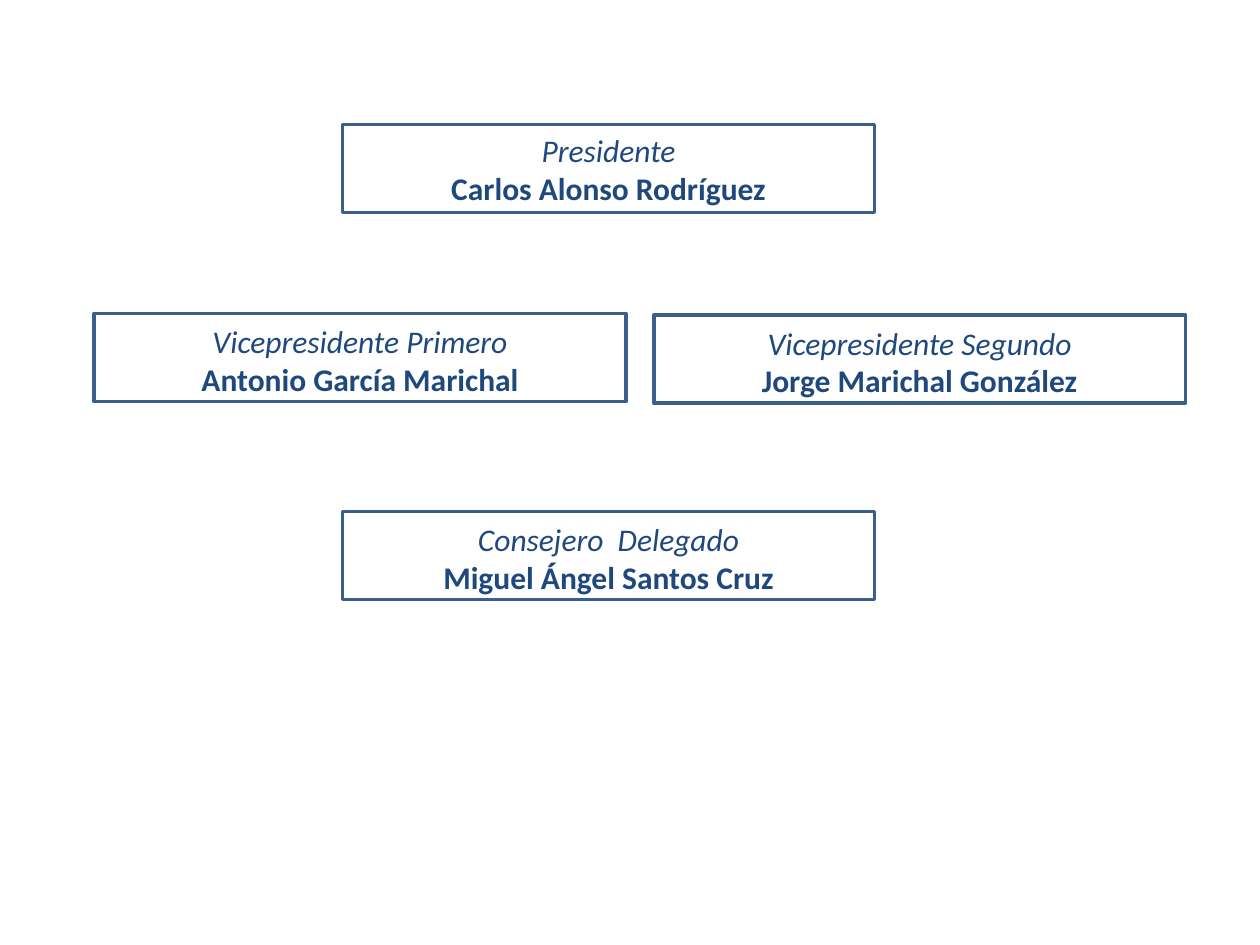
from dataclasses import dataclass

from pptx import Presentation
from pptx.dml.color import RGBColor
from pptx.enum.shapes import MSO_SHAPE as Preset
from pptx.enum.text import MSO_ANCHOR as Anchor, PP_ALIGN as Align
from pptx.slide import Slide
from pptx.util import Cm, Pt

BORDER_BLUE = RGBColor(0x3A, 0x5F, 0x8C)
TEXT_BLUE = RGBColor(0x1F, 0x49, 0x7D)
BOX_WIDTH = Cm(10.72)
BOX_HEIGHT = Cm(1.78)
CENTRE_LEFT = 6.91


@dataclass(frozen=True)
class Position:
    role: str
    holder: str
    left: float
    top: float
    top_inset: float = 0.13


POSITIONS = [
    Position("Presidente", "Carlos Alonso Rodríguez", CENTRE_LEFT, 2.51, 0.04),
    Position("Vicepresidente Primero", "Antonio García Marichal", 1.9, 6.32),
    Position("Vicepresidente Segundo", "Jorge Marichal González", 13.18, 6.35),
    Position("Consejero  Delegado", "Miguel Ángel Santos Cruz", CENTRE_LEFT, 10.31),
]


def draw_position(slide: Slide, position: Position) -> None:
    shape = slide.shapes.add_shape(
        Preset.RECTANGLE, Cm(position.left), Cm(position.top), BOX_WIDTH, BOX_HEIGHT
    )
    shape.shadow.inherit = False
    shape.fill.background()
    shape.line.color.rgb = BORDER_BLUE
    shape.line.width = Pt(2)

    frame = shape.text_frame
    frame.word_wrap = True
    frame.vertical_anchor = Anchor.MIDDLE
    frame.margin_top = Cm(position.top_inset)
    frame.margin_bottom = Cm(0.04)
    frame.text = f"{position.role}\n{position.holder}"
    role, holder = frame.paragraphs
    for paragraph in (role, holder):
        paragraph.alignment = Align.CENTER
        paragraph.font.name = "Calibri"
        paragraph.font.size = Pt(18)
        paragraph.font.color.rgb = TEXT_BLUE
    role.font.italic = True
    holder.font.bold = True


def main() -> None:
    presentation = Presentation()
    presentation.slide_width = Cm(25.4)
    presentation.slide_height = Cm(19.05)
    slide = presentation.slides.add_slide(presentation.slide_layouts[6])
    for position in POSITIONS:
        draw_position(slide, position)
    presentation.save("out.pptx")


if __name__ == "__main__":
    main()
